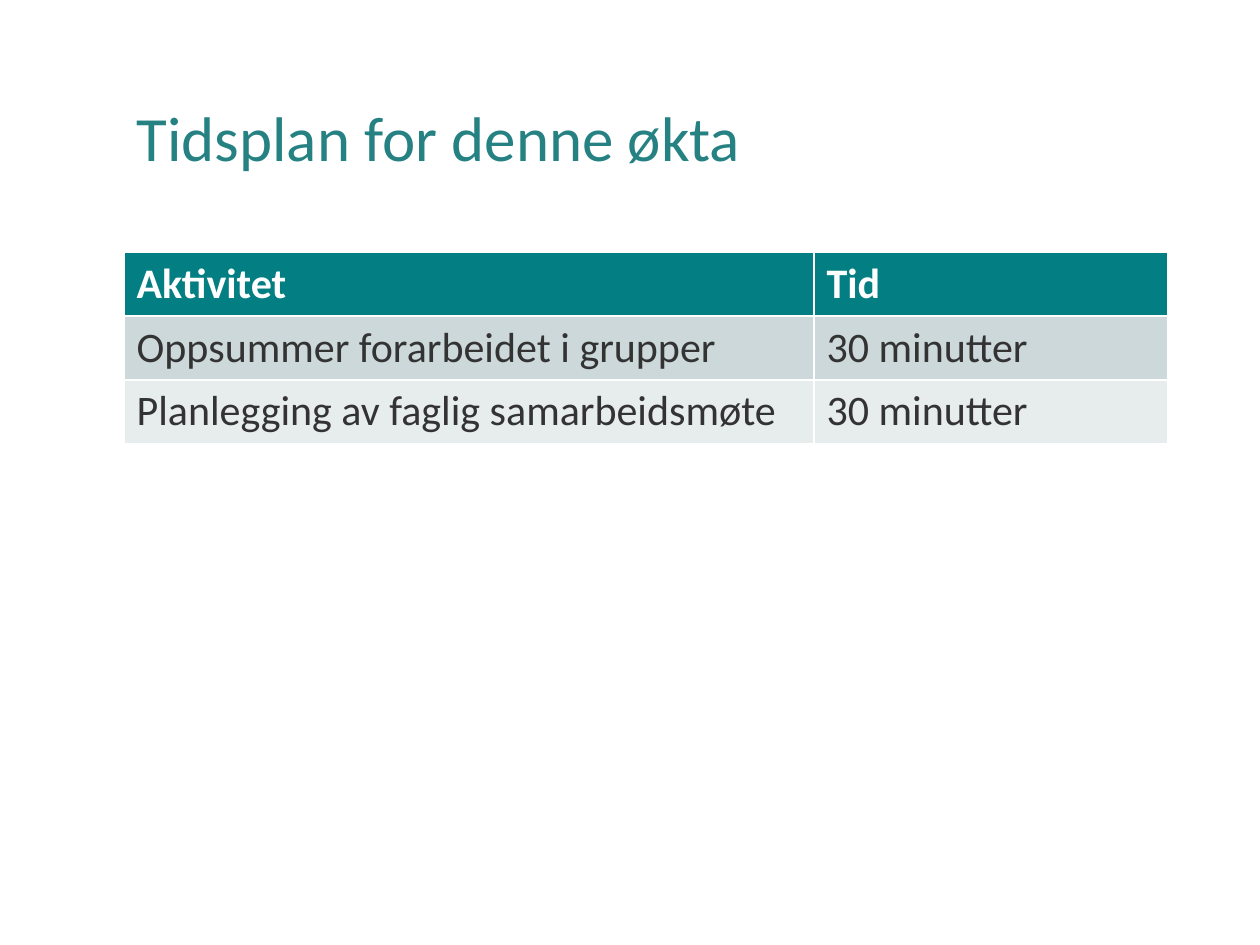
from pptx import Presentation
from pptx.dml.color import RGBColor
from pptx.enum.text import MSO_ANCHOR as Anchor, PP_ALIGN as Align
from pptx.util import Emu, Pt

PX = 914400 // 126


def px(length):
    return Emu(length * PX)


def color(hex_value):
    return RGBColor.from_string(hex_value)


def write(frame, text, *, size, ink, font="Calibri", bold=False, spacing=1.0):
    paragraph = frame.paragraphs[0]
    paragraph.alignment = Align.LEFT
    paragraph.line_spacing = spacing
    run = paragraph.add_run()
    run.text = text
    run.font.name = font
    run.font.size = Pt(size)
    run.font.bold = bold
    run.font.color.rgb = color(ink)


class Deck:
    TITLE_INK = "268183"
    HEADER_FILL = "037F83"
    HEADER_INK = "FFFFFF"
    BODY_INK = "333333"
    BANDS = ("CCD8D9", "E7ECED")

    def __init__(self, width, height):
        self.presentation = Presentation()
        self.presentation.slide_width = px(width)
        self.presentation.slide_height = px(height)
        title_only = self.presentation.slide_layouts[5]
        self.slide = self.presentation.slides.add_slide(title_only)

    def title(self, text, left, top, width, height):
        heading = self.slide.shapes.title
        heading.left, heading.top = px(left), px(top)
        heading.width, heading.height = px(width), px(height)
        heading.text_frame.vertical_anchor = Anchor.MIDDLE
        write(heading.text_frame, text, size=36, ink=self.TITLE_INK, spacing=0.9)

    def table(self, rows, left, top, column_widths, row_height):
        """Add a table with a header row; the default style draws its white rules."""
        table = self.slide.shapes.add_table(
            len(rows), len(column_widths), px(left), px(top),
            px(sum(column_widths)), px(row_height * len(rows))).table
        for column, width in zip(table.columns, column_widths):
            column.width = px(width)
        for row_index, texts in enumerate(rows):
            header = row_index == 0
            fill = self.HEADER_FILL if header else self.BANDS[(row_index - 1) % 2]
            ink = self.HEADER_INK if header else self.BODY_INK
            for column_index, text in enumerate(texts):
                cell = table.cell(row_index, column_index)
                cell.fill.solid()
                cell.fill.fore_color.rgb = color(fill)
                write(cell.text_frame, text, size=24, ink=ink, bold=header)

    def save(self):
        self.presentation.save("out.pptx")


def main():
    deck = Deck(1260, 945)
    deck.title("Tidsplan for denne økta", 124, 50, 1044, 183)
    schedule = [
        ("Aktivitet", "Tid"),
        ("Oppsummer forarbeidet i grupper", "30 minutter"),
        ("Planlegging av faglig samarbeidsmøte", "30 minutter"),
    ]
    deck.table(schedule, 124, 252, column_widths=(690, 354), row_height=63)
    deck.save()


if __name__ == "__main__":
    main()
